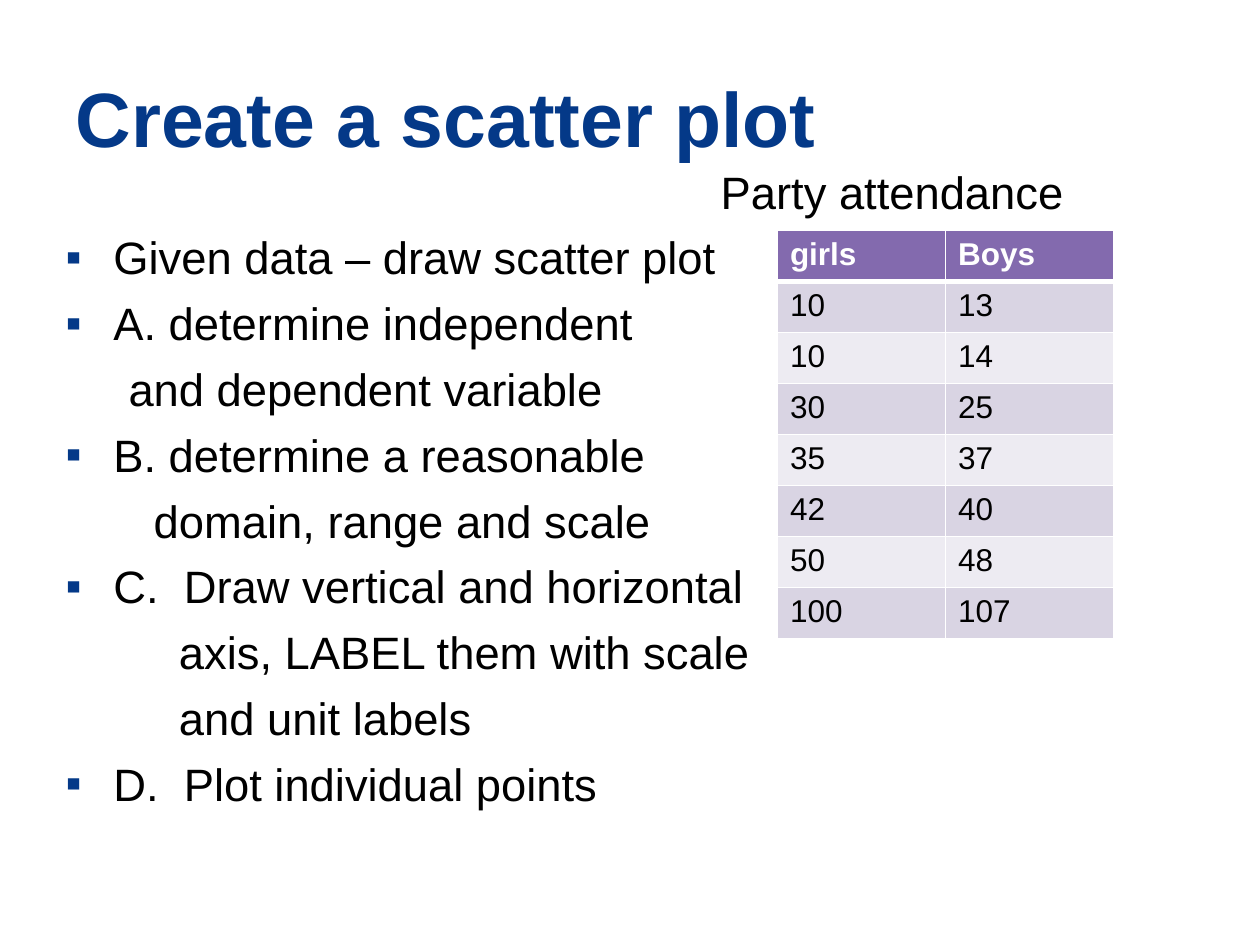
"""Build the scatter plot lesson slide with its steps and data table."""
from lxml import etree
from pptx import Presentation
from pptx.dml.color import RGBColor
from pptx.enum import text
from pptx.oxml import ns
from pptx.util import Inches, Pt

TITLE = "Create a scatter plot"
STEPS = [
    ("Party attendance", 5.2),
    ("Given data – draw scatter plot", 0),
    ("A. determine independent", 0),
    ("and dependent variable", 0.5),
    ("B. determine a reasonable", 0),
    ("domain, range and scale", 0.7),
    ("C.  Draw vertical and horizontal", 0),
    ("axis, LABEL them with scale", 0.9),
    ("and unit labels", 0.9),
    ("D.  Plot individual points", 0),
]
DATA = [("girls", "Boys"), (10, 13), (10, 14), (30, 25), (35, 37),
        (42, 40), (50, 48), (100, 107)]
HEX = {"blue": "043988", "black": "000000", "white": "FFFFFF",
       "head": "836AAE", "dark": "D9D4E3", "light": "EDEBF2"}
HANG = 0.38


def tint(name):
    return RGBColor.from_string(HEX[name])


def add(node, tag, **attrs):
    return etree.SubElement(node, ns.qn(tag), attrs)


def paint(node, name):
    add(add(node, "a:solidFill"), "a:srgbClr", val=HEX[name])


def style(para, size, name, bold=False):
    font = para.font
    font.name, font.size, font.bold = "Arial", Pt(size), bold
    font.color.rgb = tint(name)


def place(shape, *box):
    shape.left, shape.top, shape.width, shape.height = map(Inches, box)


def indent(para, left):
    props = para._p.get_or_add_pPr()
    props.set("marL", str(Inches(left or HANG)))
    props.set("indent", str(0 if left else -Inches(HANG)))
    if left:
        add(props, "a:buNone")
    else:
        paint_bullet = add(props, "a:buClr")
        add(paint_bullet, "a:srgbClr", val=HEX["blue"])
        add(props, "a:buFont", typeface="Arial")
        add(props, "a:buChar", char="▪")


def fill_body(body):
    frame = body.text_frame
    frame.auto_size = text.MSO_AUTO_SIZE.NONE
    frame.text = "\n".join(words for words, _ in STEPS)
    for i, (para, (_, left)) in enumerate(zip(frame.paragraphs, STEPS)):
        para.space_before = Pt(6.5 if i else 3)
        indent(para, left)
        style(para, 25.9, "black")


def edge(cell, row):
    props = cell._tc.get_or_add_tcPr()
    for side in "LRTB":
        thick = (row, side) in [(0, "B"), (1, "T")]
        paint(add(props, f"a:ln{side}", w=str(Pt(3 if thick else 1))), "white")


def add_data(slide):
    grid = slide.shapes.add_table(
        len(DATA), len(DATA[0]), Inches(6.17), Inches(1.83),
        Inches(2.67), Inches(3.24)).table
    for r, row in enumerate(DATA):
        for c, value in enumerate(row):
            cell = grid.cell(r, c)
            cell.text = str(value)
            style(cell.text_frame.paragraphs[0], 18,
                  "black" if r else "white", r == 0)
            edge(cell, r)
            cell.fill.solid()
            cell.fill.fore_color.rgb = tint(
                ("light", "dark")[r % 2] if r else "head")


def main():
    deck = Presentation()
    deck.slide_width, deck.slide_height = Inches(10), Inches(7.5)
    slide = deck.slides.add_slide(deck.slide_layouts[1])
    title, body = slide.placeholders
    place(title, 0.5, 0.3, 9, 1.25)
    title.text_frame.text = TITLE
    title.text_frame.vertical_anchor = text.MSO_ANCHOR.MIDDLE
    head = title.text_frame.paragraphs[0]
    head.alignment = text.PP_ALIGN.LEFT
    style(head, 44, "blue", True)
    place(body, 0.42, 1.25, 9, 4.95)
    fill_body(body)
    add_data(slide)
    deck.save("out.pptx")


if __name__ == "__main__":
    main()
